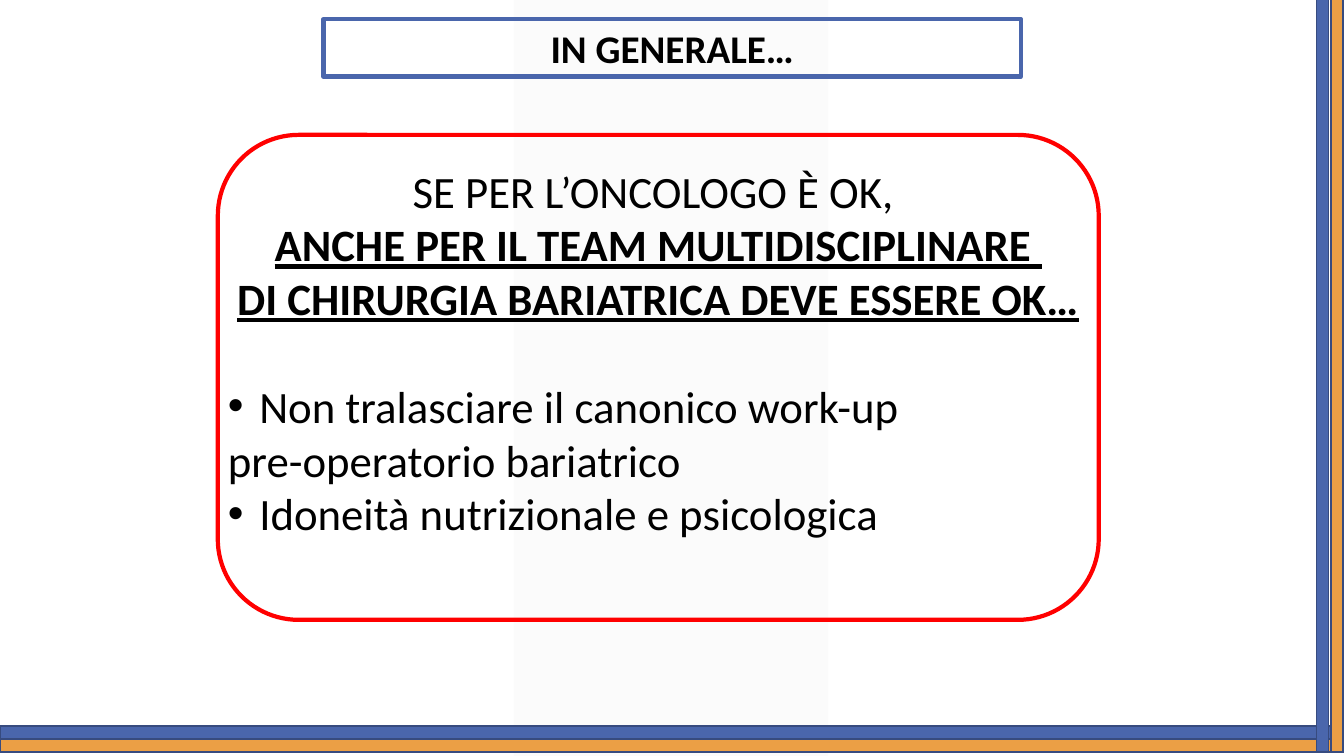
import pptx
import pptx.util
from lxml import etree
from pptx.dml.color import RGBColor
from pptx.enum.shapes import MSO_SHAPE
from pptx.enum.text import MSO_ANCHOR, MSO_AUTO_SIZE, PP_ALIGN
from pptx.oxml.ns import qn
from pptx.util import Cm

BLACK = RGBColor(0, 0, 0)
BLUE = RGBColor(0x4A, 0x66, 0xAC)
NAVY = RGBColor(0x37, 0x4B, 0x7F)
ORANGE = RGBColor(0xEB, 0x9F, 0x45)
RED = RGBColor(0xFF, 0, 0)
GREY = RGBColor(0xF2, 0xF2, 0xF2)

WIDTH, HEIGHT = 33.87, 19.05
PLAIN, STRONG, ITEM, REST = "plain", "strong", "item", "rest"
LINES = [
    ("SE PER L’ONCOLOGO È OK, ", PLAIN),
    ("ANCHE PER IL TEAM MULTIDISCIPLINARE ", STRONG),
    ("DI CHIRURGIA BARIATRICA DEVE ESSERE OK…", STRONG),
    ("Non tralasciare il canonico work-up", ITEM),
    ("pre-operatorio bariatrico", REST),
    ("Idoneità nutrizionale e psicologica", ITEM),
]


def add_box(slide, kind, area, fill=None, line=None, width=1.25):
    box = slide.shapes.add_shape(kind, *map(Cm, area))
    box.shadow.inherit = False
    if fill is None:
        box.fill.background()
    else:
        box.fill.solid()
        box.fill.fore_color.rgb = fill
    if line is None:
        box.line.fill.background()
    else:
        box.line.color.rgb = line
        box.line.width = pptx.util.Pt(width)
    return box


def add_band(slide):
    band = add_box(slide, MSO_SHAPE.PARALLELOGRAM, (12.95, 0, 7.92, HEIGHT), GREY)
    band.adjustments[0] = 0
    color = band.element.spPr.find(".//" + qn("a:srgbClr"))
    etree.SubElement(color, qn("a:alpha"), val="30000")


def place(holder, area):
    """Move a placeholder to its area, in front of the other shapes."""
    holder.left, holder.top, holder.width, holder.height = map(Cm, area)
    holder.element.getparent().append(holder.element)
    frame = holder.text_frame
    frame.word_wrap = True
    frame.auto_size = MSO_AUTO_SIZE.NONE
    return frame


def set_font(para, size, bold=False, under=False):
    for run in para.runs:
        font = run.font
        font.name = "Calibri"
        font.size = pptx.util.Pt(size)
        font.bold = bold
        font.underline = under
        font.color.rgb = BLACK


def set_bullet(para, shown):
    props = para._p.get_or_add_pPr()
    indent = Cm(0.79) if shown else 0
    props.set("marL", str(indent))
    props.set("indent", str(-indent))
    if shown:
        etree.SubElement(props, qn("a:buFont"), typeface="Arial")
        etree.SubElement(props, qn("a:buChar"), char="•")
    else:
        etree.SubElement(props, qn("a:buNone"))


def fill_title(slide):
    title = slide.shapes.title
    frame = place(title, (8.15, 0.48, 17.58, 1.45))
    title.line.color.rgb = BLUE
    title.line.width = pptx.util.Pt(3)
    frame.vertical_anchor = MSO_ANCHOR.MIDDLE
    frame.text = "IN GENERALE…"
    frame.paragraphs[0].alignment = PP_ALIGN.CENTER
    set_font(frame.paragraphs[0], 28, bold=True)


def fill_body(slide):
    frame = place(slide.placeholders[1], (5.49, 3.99, 22.2, 11.2))
    frame.vertical_anchor = MSO_ANCHOR.TOP
    frame.text = "\n".join(text for text, style in LINES)
    last = None
    for para, (text, style) in zip(frame.paragraphs, LINES):
        set_bullet(para, style == ITEM)
        centred = style in (PLAIN, STRONG)
        para.alignment = PP_ALIGN.CENTER if centred else PP_ALIGN.LEFT
        para.line_spacing = 1.0
        # One line of space parts the heading from the list
        gap = 38.4 if last == STRONG and style == ITEM else 0
        para.space_before = pptx.util.Pt(gap)
        set_font(para, 32, style == STRONG, style == STRONG)
        last = style


def main():
    deck = pptx.Presentation()
    deck.slide_width, deck.slide_height = Cm(WIDTH), Cm(HEIGHT)
    slide = deck.slides.add_slide(deck.slide_layouts[1])

    # Backdrop and edge bars
    add_band(slide)
    for top, color in ((18.29, BLUE), (18.62, ORANGE)):
        add_box(slide, MSO_SHAPE.RECTANGLE, (0, top, WIDTH, 0.33), color, NAVY)
    for left, color in ((33.18, BLUE), (33.54, ORANGE)):
        add_box(slide, MSO_SHAPE.RECTANGLE, (left, -0.37, 0.3, 19.33), color, NAVY)

    # Title, red frame and its text
    fill_title(slide)
    add_box(slide, MSO_SHAPE.ROUNDED_RECTANGLE, (5.49, 3.4, 22.2, 12.22),
            line=RED, width=3)
    fill_body(slide)
    deck.save("out.pptx")


if __name__ == "__main__":
    main()
